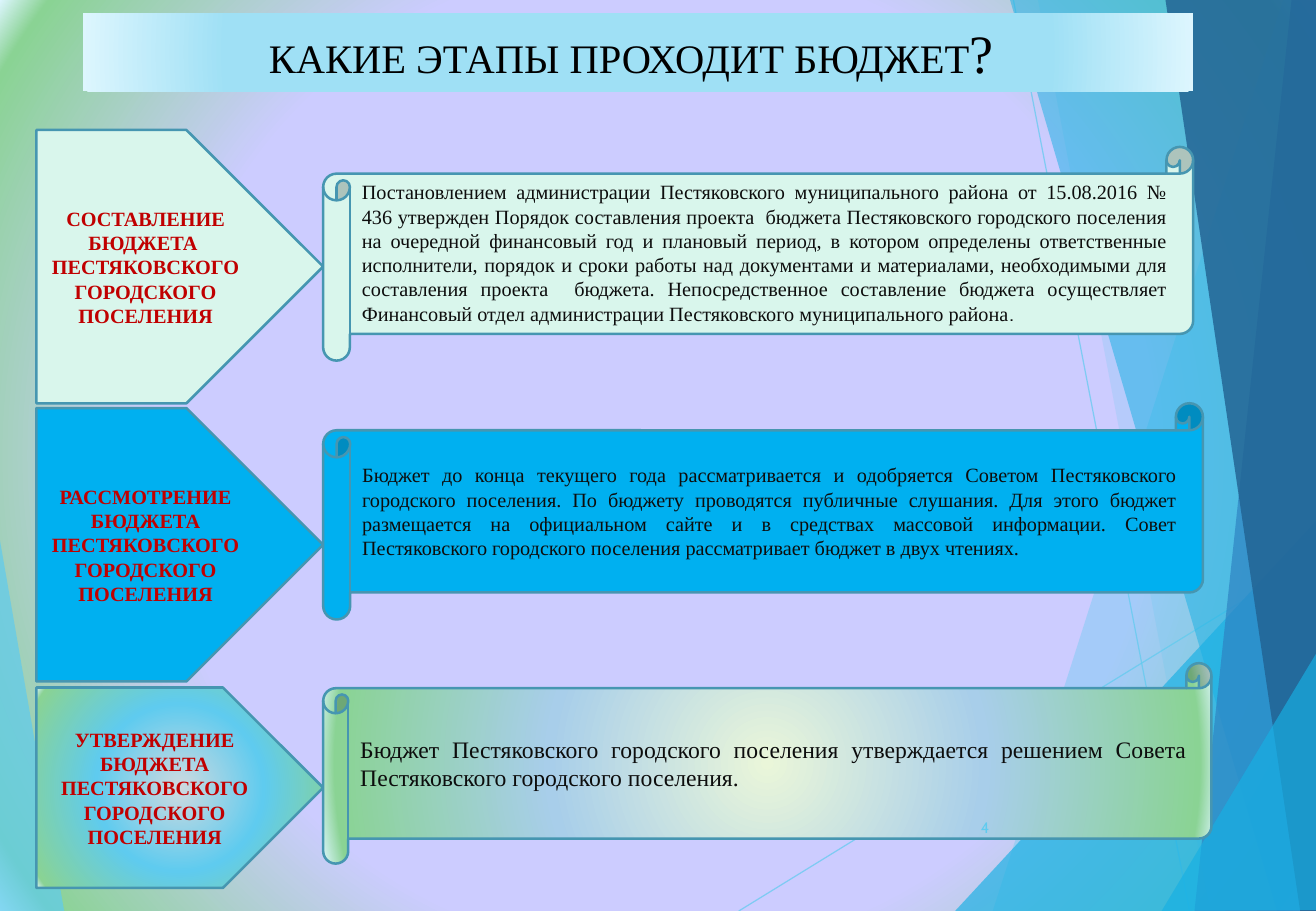
from dataclasses import dataclass

from lxml import etree
from pptx import Presentation
from pptx.dml.color import RGBColor
from pptx.enum.shapes import MSO_CONNECTOR, MSO_SHAPE as SHAPE
from pptx.enum.text import MSO_ANCHOR as ANCHOR, PP_ALIGN as ALIGN
from pptx.oxml.ns import qn
from pptx.util import Pt

PX = 9144


@dataclass(frozen=True)
class Theme:
    serif: str = "Times New Roman"
    sans: str = "Cabin"
    title_size: int = 24
    question_size: int = 32
    body_size: int = 12
    approval_size: int = 14
    number_size: int = 9
    outline_width: float = 1.5
    ray_width: float = 0.75
    black: str = "000000"
    ink: str = "0D0D0D"
    red: str = "C00000"
    outline: str = "4696B1"
    sky: str = "5FCBEF"
    cyan: str = "17B0E4"
    blue: str = "2E83C3"
    navy: str = "226292"
    mint: str = "D9F6EC"
    azure: str = "00B0F0"
    backdrop: tuple = ((62, "CCCCFF"), (95, "8AD394"), (100, "DDF6FE"))
    banner: tuple = ((74, "9FE0F5"), (100, "DDF6FE"))
    stage_glow: tuple = ((0, "CFDADF"), (48, "5FCBEF"), (95, "8AD394"), (100, "DDF6FE"))
    scroll_glow: tuple = ((0, "EAF6D9"), (48, "A8CEEA"), (95, "8AD394"), (100, "DDF6FE"))


THEME = Theme()

FACETS = [
    ([(-1, 439), (53, 751), (-1, 750)], THEME.sky, 70),
    ([(1056, 0), (817, 750), (1085, 751), (1084, 1)], THEME.sky, 36),
    ([(854, -1), (996, 750), (1084, 750), (1084, -1)], THEME.sky, 20),
    ([(786, 750), (1083, 429), (1084, 750)], THEME.cyan, 66),
    ([(831, -1), (1051, 750), (1084, 749), (1084, -1)], THEME.cyan, 50),
    ([(1063, -1), (983, 750), (1084, 750), (1084, -1)], THEME.blue, 70),
    ([(959, -1), (1070, 750), (1085, 750), (1084, -1)], THEME.navy, 82),
    ([(956, 750), (1085, 535), (1086, 749)], THEME.cyan, 66),
]
RAYS = [(608, 750, 1084, 457), (834, 0, 979, 750)]

STAGES = [
    (["СОСТАВЛЕНИЕ БЮДЖЕТА  ПЕСТЯКОВСКОГО ГОРОДСКОГО ПОСЕЛЕНИЯ"],
     (30, 107, 236, 225), THEME.mint),
    (["РАССМОТРЕНИЕ БЮДЖЕТА", "ПЕСТЯКОВСКОГО ГОРОДСКОГО ПОСЕЛЕНИЯ"],
     (30, 336, 236, 225), THEME.azure),
    (["УТВЕРЖДЕНИЕ БЮДЖЕТА ПЕСТЯКОВСКОГО ГОРОДСКОГО ПОСЕЛЕНИЯ"],
     (30, 566, 236, 165), THEME.stage_glow),
]

DRAFTING = (
    "Постановлением администрации Пестяковского муниципального района от 15.08.2016 № 436 "
    "утвержден Порядок составления проекта  бюджета Пестяковского городского поселения "
    "на очередной финансовый год и плановый период, в котором определены ответственные "
    "исполнители, порядок и сроки работы над документами и материалами, необходимыми для "
    "составления проекта  бюджета. Непосредственное составление бюджета осуществляет "
    "Финансовый отдел администрации Пестяковского муниципального района"
)
REVIEW = (
    "Бюджет до конца текущего года рассматривается и одобряется Советом Пестяковского "
    "городского поселения. По бюджету проводятся публичные слушания. Для этого бюджет "
    "размещается на официальном сайте и в средствах массовой информации. Совет "
    "Пестяковского городского поселения рассматривает бюджет в двух чтениях. "
)
APPROVAL = (
    "Бюджет Пестяковского городского поселения утверждается решением Совета "
    "Пестяковского городского поселения. "
)
SCROLLS = [
    (DRAFTING, (266, 121, 716, 176), THEME.mint, THEME.body_size, ANCHOR.TOP),
    (REVIEW, (266, 332, 724, 178), THEME.azure, THEME.body_size, ANCHOR.MIDDLE),
    (APPROVAL, (266, 546, 731, 165), THEME.scroll_glow, THEME.approval_size, ANCHOR.MIDDLE),
]


def rgb(color):
    return RGBColor.from_string(color)


def scaled(box):
    return [length * PX for length in box]


def set_alpha(element, percent):
    color = element.find(".//" + qn("a:srgbClr"))
    etree.SubElement(color, qn("a:alpha"), val=str(percent * 1000))


def paint(fill, owner, paint_value):
    fill.solid()
    if isinstance(paint_value, str):
        fill.fore_color.rgb = rgb(paint_value)
        return
    glow = etree.Element(qn("a:gradFill"), rotWithShape="1")
    stops = etree.SubElement(glow, qn("a:gsLst"))
    for position, color in paint_value:
        stop = etree.SubElement(stops, qn("a:gs"), pos=str(position * 1000))
        etree.SubElement(stop, qn("a:srgbClr"), val=color)
    center = etree.SubElement(glow, qn("a:path"), path="circle")
    etree.SubElement(center, qn("a:fillToRect"), l="50000", t="50000", r="50000", b="50000")
    owner.replace(owner.find(qn("a:solidFill")), glow)


def add_facet(slide, points, color, alpha):
    builder = slide.shapes.build_freeform(*points[0], scale=PX)
    builder.add_line_segments(points[1:], close=True)
    facet = builder.convert_to_shape()
    facet.shadow.inherit = False
    paint(facet.fill, facet._element.spPr, color)
    set_alpha(facet._element.spPr, alpha)
    facet.line.fill.background()


def add_ray(slide, ends):
    ray = slide.shapes.add_connector(MSO_CONNECTOR.STRAIGHT, *scaled(ends))
    ray.line.color.rgb = rgb(THEME.sky)
    ray.line.width = Pt(THEME.ray_width)
    set_alpha(ray._element.spPr, 70)
    etree.SubElement(ray._element.spPr, qn("a:effectLst"))


def add_panel(slide, kind, box, paint_value, anchor, outlined=True):
    panel = slide.shapes.add_shape(kind, *scaled(box))
    panel.shadow.inherit = False
    paint(panel.fill, panel._element.spPr, paint_value)
    if outlined:
        panel.line.color.rgb = rgb(THEME.outline)
        panel.line.width = Pt(THEME.outline_width)
    else:
        panel.line.fill.background()
    panel.text_frame.word_wrap = True
    panel.text_frame.vertical_anchor = anchor
    return panel.text_frame


def style(paragraph, align, color, size=None, face=THEME.serif, bold=False):
    paragraph.alignment = align
    paragraph.font.name = face
    paragraph.font.color.rgb = rgb(color)
    paragraph.font.bold = bold
    if size:
        paragraph.font.size = Pt(size)


def add_run(paragraph, text, size=None, face=None):
    run = paragraph.add_run()
    run.text = text
    if size:
        run.font.size = Pt(size)
    if face:
        run.font.name = face


def add_title(slide):
    frame = add_panel(slide, SHAPE.RECTANGLE, (68, 11, 914, 64), THEME.banner,
                      ANCHOR.TOP, outlined=False)
    heading = frame.paragraphs[0]
    style(heading, ALIGN.CENTER, THEME.black)
    add_run(heading, "КАКИЕ ЭТАПЫ ПРОХОДИТ БЮДЖЕТ", THEME.title_size)
    add_run(heading, "? ", THEME.question_size)


def add_stage(slide, lines, box, paint_value):
    frame = add_panel(slide, SHAPE.PENTAGON, box, paint_value, ANCHOR.MIDDLE)
    frame.text = "\n".join(lines)
    for line in frame.paragraphs:
        style(line, ALIGN.CENTER, THEME.red, THEME.body_size, bold=True)


def add_scroll(slide, text, box, paint_value, size, anchor):
    frame = add_panel(slide, SHAPE.HORIZONTAL_SCROLL, box, paint_value, anchor)
    description = frame.paragraphs[0]
    style(description, ALIGN.JUSTIFY, THEME.ink, size)
    add_run(description, text)
    if text == DRAFTING:
        description.font.name = None
        description.runs[0].font.name = THEME.serif
        add_run(description, ".", face=THEME.sans)


def add_page_number(slide):
    frame = slide.shapes.add_textbox(*scaled((760, 666, 64, 30))).text_frame
    frame.word_wrap = True
    frame.vertical_anchor = ANCHOR.MIDDLE
    frame.text = "4"
    style(frame.paragraphs[0], ALIGN.RIGHT, THEME.sky, THEME.number_size, THEME.sans)


def main():
    deck = Presentation()
    deck.slide_width, deck.slide_height = scaled((1083, 750))
    slide = deck.slides.add_slide(deck.slide_layouts[6])
    backdrop = slide.background.fill
    backdrop.solid()
    paint(backdrop, slide._element.find(".//" + qn("p:bgPr")), THEME.backdrop)

    add_facet(slide, *FACETS[0])
    for ends in RAYS:
        add_ray(slide, ends)
    for facet in FACETS[1:]:
        add_facet(slide, *facet)
    add_title(slide)
    for stage in STAGES:
        add_stage(slide, *stage)
    for scroll in SCROLLS:
        add_scroll(slide, *scroll)
    add_page_number(slide)
    deck.save("out.pptx")


if __name__ == "__main__":
    main()
